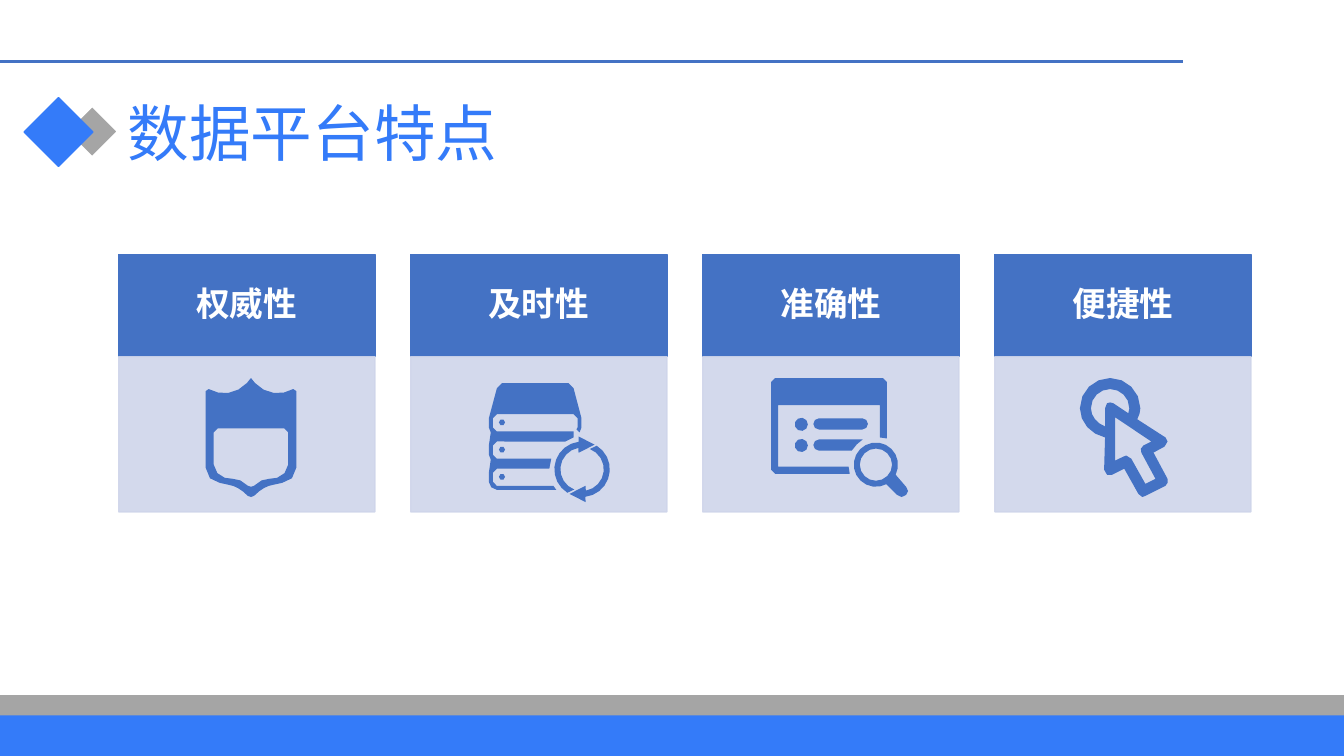
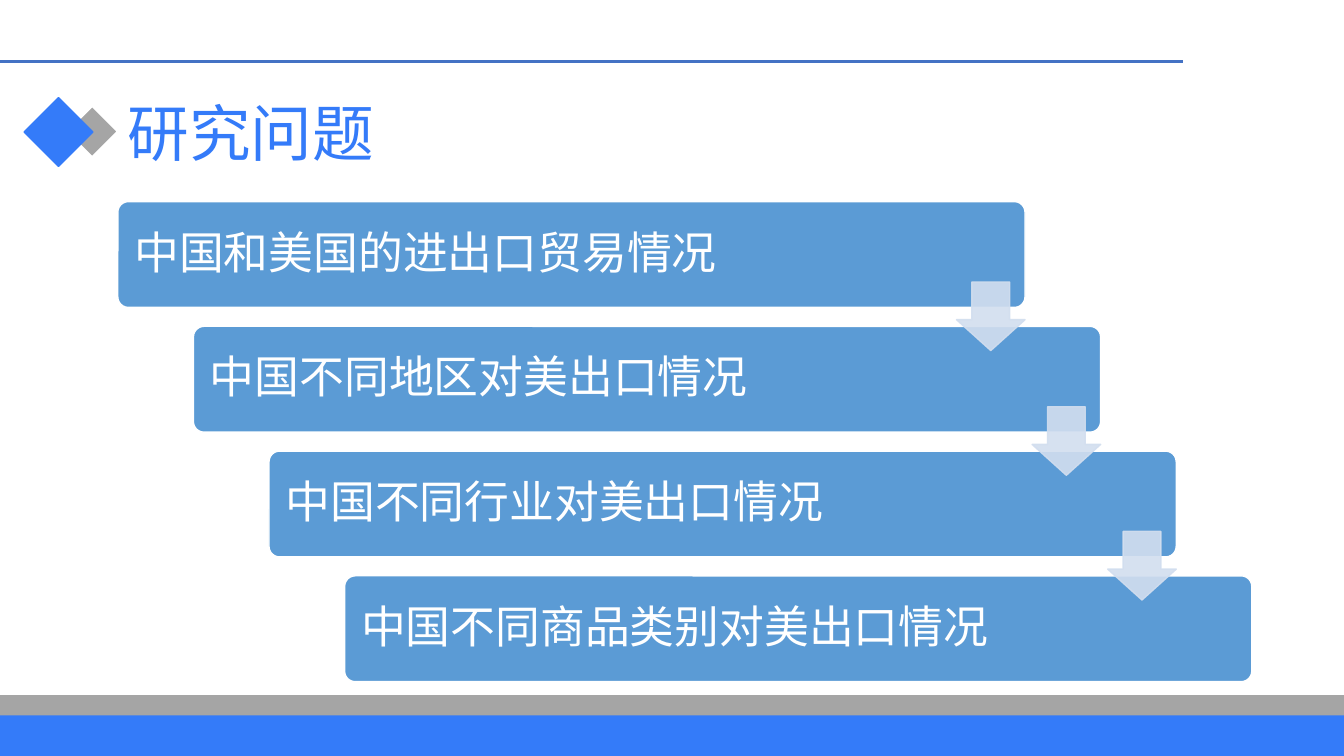
from math import cos, radians, sin

from lxml.etree import SubElement
from pptx import Presentation
from pptx.dml.color import RGBColor
from pptx.enum.shapes import MSO_CONNECTOR, MSO_SHAPE
from pptx.enum.text import MSO_ANCHOR, PP_ALIGN
from pptx.oxml.ns import qn
from pptx.util import Pt

BRIGHT = RGBColor(0x34, 0x7B, 0xF9)
BLUE = RGBColor(0x44, 0x72, 0xC4)
SKY = RGBColor(0x5B, 0x9B, 0xD5)
PALE = RGBColor(0xCF, 0xD5, 0xEA)
PALE_SKY = RGBColor(0xD2, 0xDE, 0xEF)
GRAY = RGBColor(0xA5, 0xA5, 0xA5)
WHITE = RGBColor(0xFF, 0xFF, 0xFF)

SLIDE_W, SLIDE_H = 960, 540


# General elements
def add_box(s, kind, x, y, w, h, fill, line=None, line_w=1, alpha=None):
    sp = s.shapes.add_shape(kind, Pt(x), Pt(y), Pt(w), Pt(h))
    sp.shadow.inherit = False
    sp.fill.solid()
    sp.fill.fore_color.rgb = fill
    if line is None:
        sp.line.fill.background()
    else:
        sp.line.color.rgb = line
        sp.line.width = Pt(line_w)
    if alpha:
        for color in sp._element.spPr.iter(qn("a:srgbClr")):
            SubElement(color, qn("a:alpha")).set("val", str(alpha * 1000))
    return sp


def set_text(sp, text, size, font, color, align=PP_ALIGN.LEFT, bold=False,
             inset=(7.2, 3.6)):
    tf = sp.text_frame
    tf.word_wrap = True
    tf.vertical_anchor = MSO_ANCHOR.MIDDLE
    tf.margin_left = tf.margin_right = Pt(inset[0])
    tf.margin_top = tf.margin_bottom = Pt(inset[1])
    p = tf.paragraphs[0]
    p.text = text
    p.alignment = align
    p.line_spacing = 0.9
    p.font.size = Pt(size)
    p.font.name = font
    p.font.bold = bold
    p.font.color.rgb = color


def add_slide(prs, title):
    """Slide with the shared bands, top rule, diamonds and title."""
    s = prs.slides.add_slide(prs.slide_layouts[6])
    add_box(s, MSO_SHAPE.RECTANGLE, 0, 497, SLIDE_W, 43, GRAY, GRAY, 1.5)
    add_box(s, MSO_SHAPE.RECTANGLE, 0, 511, SLIDE_W, 29, BRIGHT)
    rule = s.shapes.add_connector(MSO_CONNECTOR.STRAIGHT, 0, Pt(44), Pt(845), Pt(44))
    rule.line.color.rgb = BLUE
    rule.line.width = Pt(2.25)
    SubElement(rule._element.spPr, qn("a:effectLst"))
    add_box(s, MSO_SHAPE.DIAMOND, 47.5, 75.6, 36.7, 36.7, GRAY, WHITE, 1.5)
    add_box(s, MSO_SHAPE.DIAMOND, 17.3, 69.8, 49, 49, BRIGHT, BRIGHT)
    sp = s.shapes.add_textbox(Pt(84.2), Pt(61.2), Pt(810), Pt(72))
    set_text(sp, title, 44, "Montserrat", BRIGHT)
    return s


# Outline geometry: a pair is a corner, six numbers are a cubic curve
def flatten(path):
    points = []
    for step in path:
        if len(step) == 2:
            points.append(step)
            continue
        x0, y0 = points[-1]
        x1, y1, x2, y2, x3, y3 = step
        span = max(abs(x3 - x0), abs(y3 - y0))
        steps = 1 if span < 4 else 2 if span < 12 else 4
        for i in range(1, steps + 1):
            t = i / steps
            weights = (1 - t) ** 3, 3 * t * (1 - t) ** 2, 3 * t * t * (1 - t), t ** 3
            points.append((sum(w * x for w, x in zip(weights, (x0, x1, x2, x3))),
                           sum(w * y for w, y in zip(weights, (y0, y1, y2, y3)))))
    return points


def arc(cx, cy, r, start=0, end=360):
    steps = max(4, round((r + 4) * abs(end - start) / 360))
    angles = (radians(start + (end - start) * i / steps) for i in range(steps + 1))
    return [(cx + r * cos(a), cy + r * sin(a)) for a in angles]


def mirrored(half):
    """Close a right-hand half outline around x = 0."""
    right = flatten(half)
    return right + [(-x, y) for x, y in reversed(right)]


def add_icon(s, x, y, contours):
    builder = None
    for contour in contours:
        first, *rest = [(Pt(px), Pt(py)) for px, py in flatten(contour)]
        if builder is None:
            builder = s.shapes.build_freeform(*first, scale=1.0)
        else:
            builder.move_to(*first)
        builder.add_line_segments(rest, close=True)
    sp = builder.convert_to_shape(Pt(x), Pt(y))
    sp.shadow.inherit = False
    sp.fill.solid()
    sp.fill.fore_color.rgb = BLUE
    sp.line.fill.background()


# Icons
def shield():
    outer = [(0, 0), (2.9, 3.6), (10.1, 11.5, 21.6, 13, 30.2, 7.9),
             (31.7, 7.2, 32.4, 7.9, 32.4, 9.4), (32.4, 64),
             (32.4, 71.3, 27.4, 73.4, 22.3, 74.9), (15.8, 76.3),
             (11.5, 77, 7.2, 79.2, 2.2, 84.2), (0, 85)]
    inner = [(23.8, 36), (25.9, 36, 26.6, 37.4, 26.6, 38.9), (26.6, 61.9),
             (26.6, 67.7, 22.3, 69.1, 18.7, 71.3), (13, 72),
             (9.4, 72.7, 5.8, 72.7, 2.2, 77), (0, 77.7)]
    return [mirrored(outer), mirrored(inner)]


def refreshed_server():
    trays = [25.9 + 19.45 * i for i in range(3)]

    def tray_end(y):
        return [(5.8, y), (4.3, y, 2.9, y + 1.5, 2.9, y + 2.9), (2.9, y + 9.4),
                (2.9, y + 10.8, 4.3, y + 12.3, 5.8, y + 12.3)]

    body = [(9.4, 3.6), (56.9, 3.6), (58.3, 3.6, 60.5, 5, 60.5, 7.2), (66.2, 28.8),
            (66.2, 35.3), (64.8, 38.9), (62.6, 36.7), (63.4, 35.3), (63.4, 28.8),
            (63.4, 27.4, 62, 25.9, 60.5, 25.9), *tray_end(trays[0]),
            (60.5, 38.2), (60.5, 42.5), (54.7, 45.4),
            *tray_end(trays[1]), (44.6, 57.6), (43.2, 64.8),
            *tray_end(trays[2]), (46.1, 77), (48.2, 79.9), (5.8, 79.9),
            (2.9, 79.9, 0, 77, 0, 74.2), (0, 67.7), (1.4, 58.3), (0, 54.7), (0, 48.2),
            (1.4, 38.9), (0, 35.3), (0, 28.8), (5.8, 7.2),
            (5.8, 5, 7.9, 3.6, 9.4, 3.6)]
    lights = [arc(9.4, y + 5.8, 2.2) for y in trays]
    half_turn = (arc(0, 0, 19.8, -58, 83) + [(2.5, 23.4), (-9, 17.6), (2.5, 11.8)]
                 + arc(0, 0, 15.5, 80, -69))
    arrows = [[(66.6 + k * x, 65.2 + k * y) for x, y in half_turn] for k in (1, -1)]
    return [body, *lights, *arrows]


def searched_list():
    frame = [(2.9, 0), (79.9, 0), (82.8, 2.9), (82.8, 43.2), (77.8, 42.5),
             (77.8, 19.4), (5, 19.4), (5, 63.4), (55.4, 63.4), (56.2, 68.4),
             (2.9, 68.4), (0, 65.5), (0, 2.9)]
    lens = arc(74.9, 61.9, 15.8, 62, 387) + [
        (96.5, 77.8), (98.3, 79.5, 98.3, 82, 96.5, 83.5),
        (94.5, 85.5, 92, 85.5, 90, 83.5)]
    long_row = arc(34.2, 32.8, 4, 90, 270) + arc(65.2, 32.8, 4, -90, 90)
    cut_row = arc(34.2, 47.9, 4, 90, 270) + [
        (65.5, 43.9), (62.6, 46.1, 59.8, 48.2, 57.6, 51.9)]
    dots = [arc(21.6, y, 4.7) for y in (33.1, 48.2)]
    return [frame, lens, arc(74.9, 61.9, 11.5), long_row, cut_row, *dots]


def click_pointer():
    outer = [(62.6, 72), (52.6, 53.3), (60.5, 49), (61.9, 48.2, 62.6, 46.8, 62.6, 45.4),
             (61.2, 42.5), (41, 29.5), (42.5, 26.6, 43.2, 23.8, 43.2, 21.6),
             (43.2, 9.4, 33.1, 0, 21.6, 0), (10.1, 0, 0, 9.4, 0, 21.6),
             (0, 31.7, 7.9, 40.3, 18, 42.5), (17.3, 65.5),
             (17.3, 67, 18, 68.4, 19.4, 69.1), (20.9, 69.8, 22.3, 69.8, 23, 69.1),
             (31.7, 64.8), (41.8, 82.8), (44.6, 85), (46.8, 84.2), (61.2, 77),
             (62.6, 74.9)]
    ring = [(7.9, 21.6), (7.9, 13.7, 14.4, 7.9, 21.6, 7.9),
            (28.8, 7.9, 35.3, 13.7, 35.3, 21.6), (34.6, 25.2), (23.8, 18),
            (22.3, 17.3, 20.9, 17.3, 19.4, 18), (18, 21.6), (18, 34.6),
            (12.2, 32.4, 7.9, 27.4, 7.9, 21.6)]
    arrow = [(46.8, 75.6), (36.7, 57.6), (33.1, 55.4), (31, 56.2), (25.2, 59),
             (25.2, 28.1), (51.1, 45.4), (45.4, 48.2),
             (43.2, 49, 43.2, 51.8, 43.9, 53.3), (54, 72)]
    return [outer, ring, arrow]


# Slide contents
def add_feature_card(s, x, label, icon_x, icon):
    head = add_box(s, MSO_SHAPE.RECTANGLE, x, 182, 183, 72.8, BLUE, BLUE)
    set_text(head, label, 24, "Arial", WHITE, PP_ALIGN.CENTER, True, (13.5, 8))
    add_box(s, MSO_SHAPE.RECTANGLE, x, 254.8, 183, 110.8, PALE, PALE, alpha=90)
    add_icon(s, icon_x, 270, icon)


def add_question_steps(s, questions):
    spots = [(84.2 + 54 * i, 144 + 89.1 * i) for i in range(len(questions))]
    width, arrow = 648, 49
    for (x, y), question in zip(spots, questions):
        bar = add_box(s, MSO_SHAPE.ROUNDED_RECTANGLE, x, y, width, 75.6, SKY, WHITE)
        bar.adjustments[0] = 0.1
        set_text(bar, question, 32, "Arial", WHITE, inset=(9.5, 9.5))
    for x, y in spots[:-1]:
        sp = add_box(s, MSO_SHAPE.DOWN_ARROW, x + width - arrow, y + 57.4, arrow, arrow,
                     PALE_SKY, PALE_SKY, alpha=90)
        sp.adjustments[0] = 0.55
        sp.adjustments[1] = 0.45


def main():
    prs = Presentation()
    prs.slide_width, prs.slide_height = Pt(SLIDE_W), Pt(SLIDE_H)

    s = add_slide(prs, "数据平台特点")
    features = [("权威性", 179.3, shield()), ("及时性", 349.2, refreshed_server()),
                ("准确性", 550.8, searched_list()), ("便捷性", 771.4, click_pointer())]
    for i, (label, icon_x, icon) in enumerate(features):
        add_feature_card(s, 84.8 + 208.6 * i, label, icon_x, icon)

    s = add_slide(prs, "研究问题")
    add_question_steps(s, ["中国和美国的进出口贸易情况", "中国不同地区对美出口情况",
                           "中国不同行业对美出口情况", "中国不同商品类别对美出口情况"])

    prs.save("out.pptx")


if __name__ == "__main__":
    main()
